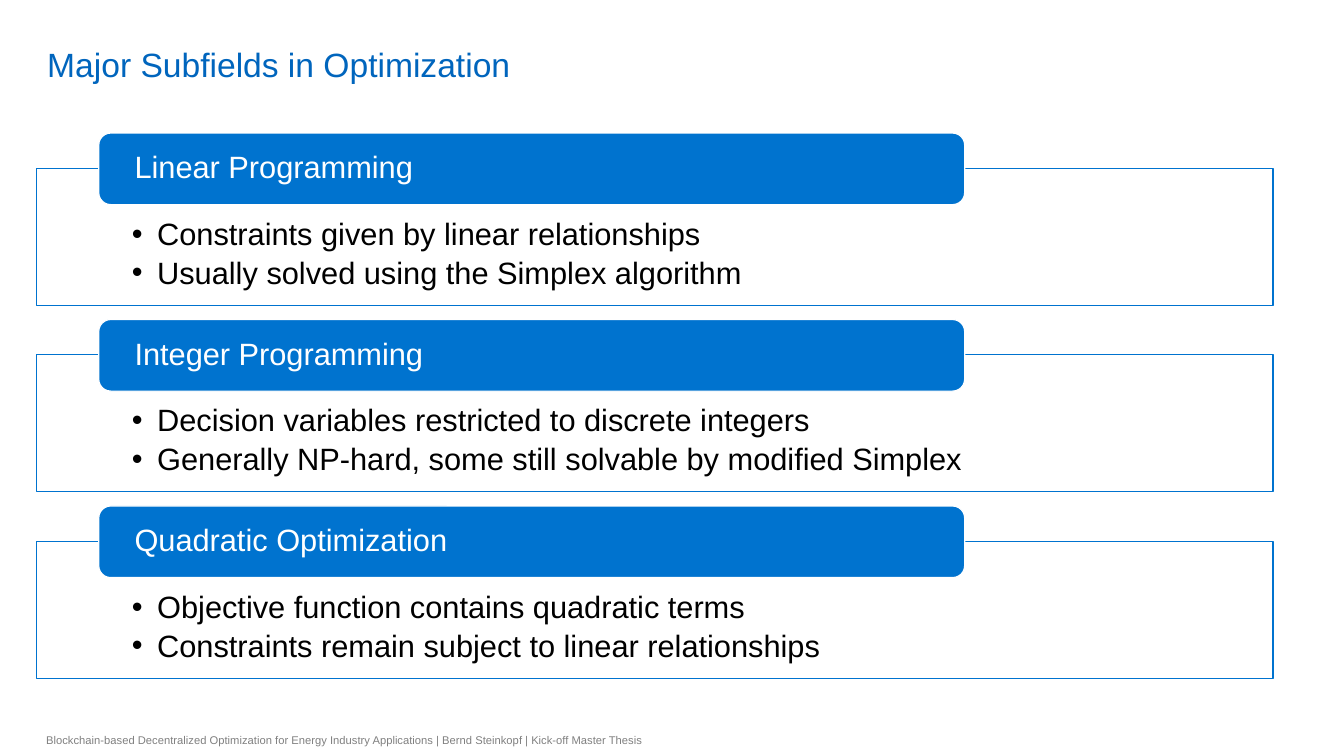
from dataclasses import dataclass

import lxml.etree
import pptx
import pptx.dml.color
import pptx.enum.shapes
import pptx.enum.text
import pptx.oxml.ns
import pptx.shapes.autoshape
import pptx.slide
import pptx.text.text
import pptx.util

Pt = pptx.util.Pt
RGBColor = pptx.dml.color.RGBColor
Anchor = pptx.enum.text.MSO_ANCHOR
Align = pptx.enum.text.PP_ALIGN
ShapeType = pptx.enum.shapes.MSO_SHAPE
qn = pptx.oxml.ns.qn

TITLE_BLUE = RGBColor(0x00, 0x65, 0xBD)
PANEL_BLUE = RGBColor(0x00, 0x73, 0xCF)
WHITE = RGBColor(0xFF, 0xFF, 0xFF)
BLACK = RGBColor(0x00, 0x00, 0x00)
GREY = RGBColor(0x80, 0x80, 0x80)
FONT = "Arial"


@dataclass
class Box:
    left: float
    top: float
    width: float
    height: float


@dataclass
class Subfield:
    name: str
    points: list[str]


SUBFIELDS = [
    Subfield("Linear Programming", [
        "Constraints given by linear relationships",
        "Usually solved using the Simplex algorithm",
    ]),
    Subfield("Integer Programming", [
        "Decision variables restricted to discrete integers",
        "Generally NP-hard, some still solvable by modified Simplex",
    ]),
    Subfield("Quadratic Optimization", [
        "Objective function contains quadratic terms",
        "Constraints remain subject to linear relationships",
    ]),
]

FIRST_HEADER_TOP = 95.04
SUBFIELD_PITCH = 133.2
PANEL_OFFSET = 25.2
BODY_SIZE = 22


def set_frame(frame: pptx.text.text.TextFrame, anchor: Anchor,
              left: float, top: float, bottom: float) -> None:
    """Set wrapping, anchor and insets; left and right insets are equal."""
    frame.word_wrap = True
    frame.vertical_anchor = anchor
    frame.margin_left = frame.margin_right = Pt(left)
    frame.margin_top, frame.margin_bottom = Pt(top), Pt(bottom)


def add_run(paragraph: pptx.text.text._Paragraph, text: str,
            size: float, color: RGBColor) -> None:
    paragraph.alignment = Align.LEFT
    run = paragraph.add_run()
    run.text = text
    run.font.name = FONT
    run.font.size = Pt(size)
    run.font.color.rgb = color


def add_label(slide: pptx.slide.Slide, box: Box, text: str, size: float,
              color: RGBColor, anchor: Anchor, inset: float) -> None:
    label = slide.shapes.add_textbox(
        Pt(box.left), Pt(box.top), Pt(box.width), Pt(box.height))
    set_frame(label.text_frame, anchor, 7.2, inset, inset)
    add_run(label.text_frame.paragraphs[0], text, size, color)


def add_block(slide: pptx.slide.Slide, kind: ShapeType, box: Box,
              fill: RGBColor, line: RGBColor) -> pptx.shapes.autoshape.Shape:
    shape = slide.shapes.add_shape(
        kind, Pt(box.left), Pt(box.top), Pt(box.width), Pt(box.height))
    shape.shadow.inherit = False
    shape.fill.solid()
    shape.fill.fore_color.rgb = fill
    shape.line.color.rgb = line
    shape.line.width = Pt(0.85)
    return shape


def add_bullet(paragraph: pptx.text.text._Paragraph) -> None:
    properties = paragraph._p.get_or_add_pPr()
    properties.set("marL", str(Pt(18)))
    properties.set("indent", str(-Pt(18)))
    lxml.etree.SubElement(properties, qn("a:buFont"), typeface=FONT)
    lxml.etree.SubElement(properties, qn("a:buChar"), char="•")


def add_subfield(slide: pptx.slide.Slide, subfield: Subfield, top: float) -> None:
    # Outlined panel with bullet points
    panel = add_block(slide, ShapeType.RECTANGLE,
                      Box(25.92, top + PANEL_OFFSET, 883.44, 97.92), WHITE, PANEL_BLUE)
    fill_color = panel._element.spPr.find(qn("a:solidFill"))[0]
    lxml.etree.SubElement(fill_color, qn("a:alpha"), val="90000")
    frame = panel.text_frame
    set_frame(frame, Anchor.TOP, 68.4, 36, 12.24)
    for index, point in enumerate(subfield.points):
        paragraph = frame.add_paragraph() if index else frame.paragraphs[0]
        add_bullet(paragraph)
        paragraph.line_spacing = 0.9
        paragraph.space_after = Pt(4)
        add_run(paragraph, point, BODY_SIZE, BLACK)

    # Header over the panel's upper edge
    header = add_block(slide, ShapeType.ROUNDED_RECTANGLE,
                       Box(70.56, top, 618.48, 51.12), PANEL_BLUE, WHITE)
    set_frame(header.text_frame, Anchor.MIDDLE, 23.04, 0, 0)
    paragraph = header.text_frame.paragraphs[0]
    paragraph.line_spacing = 0.9
    add_run(paragraph, subfield.name, BODY_SIZE, WHITE)


def main() -> None:
    presentation = pptx.Presentation()
    presentation.slide_width, presentation.slide_height = Pt(960), Pt(540)
    slide = presentation.slides.add_slide(presentation.slide_layouts[6])

    # Title and footer
    add_label(slide, Box(26.64, 3.6, 833.76, 56.88),
              "Major Subfields in Optimization", 24, TITLE_BLUE, Anchor.BOTTOM, 0)
    add_label(slide, Box(25.92, 516.96, 453.6, 23.04),
              "Blockchain-based Decentralized Optimization for Energy Industry "
              "Applications | Bernd Steinkopf | Kick-off Master Thesis",
              8, GREY, Anchor.MIDDLE, 3.6)

    # Subfields, evenly stacked
    for index, subfield in enumerate(SUBFIELDS):
        add_subfield(slide, subfield, FIRST_HEADER_TOP + index * SUBFIELD_PITCH)

    presentation.save("out.pptx")


if __name__ == "__main__":
    main()
